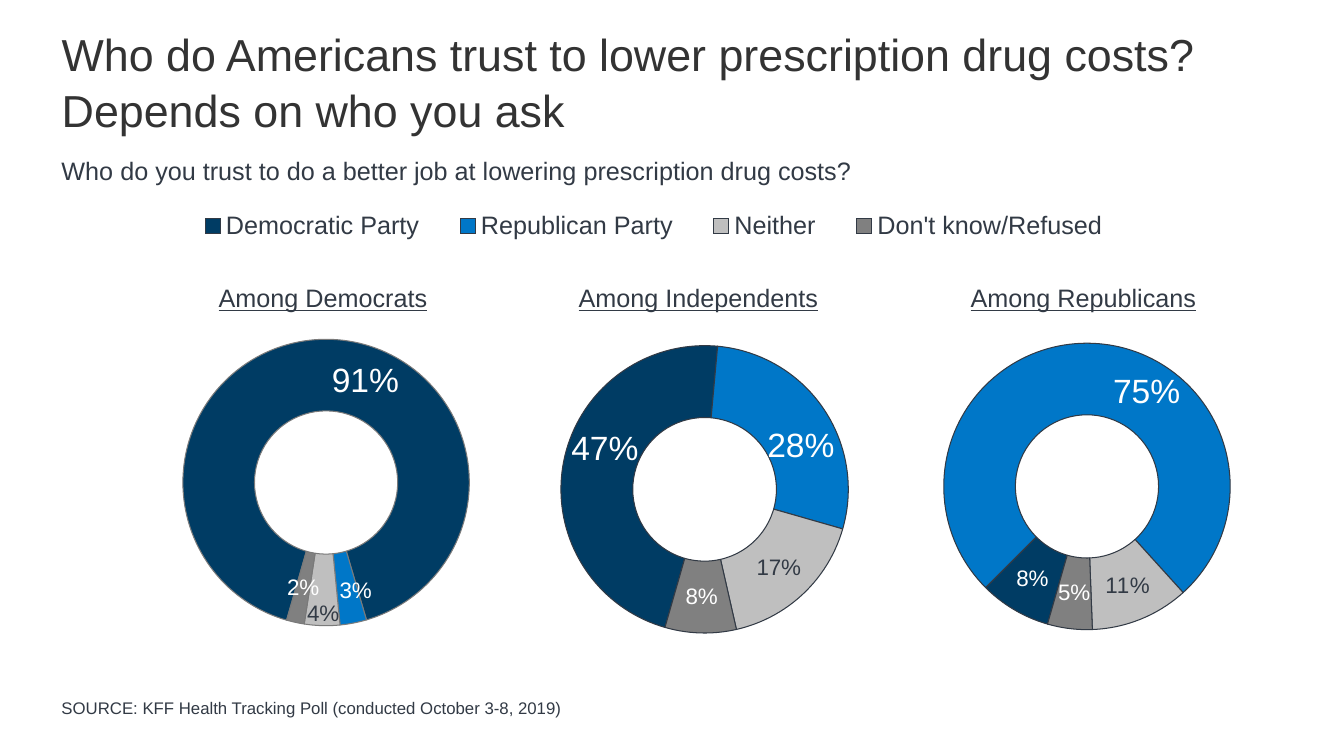
from lxml import etree
from pptx import Presentation
from pptx.chart.data import CategoryChartData
from pptx.dml.color import RGBColor
from pptx.enum.chart import XL_CHART_TYPE, XL_LEGEND_POSITION
from pptx.enum.text import MSO_ANCHOR, PP_ALIGN
from pptx.oxml.ns import qn
from pptx.util import Cm, Pt

DOUGHNUT = XL_CHART_TYPE.DOUGHNUT
LEGEND_TOP = XL_LEGEND_POSITION.TOP
TOP, BOTTOM = MSO_ANCHOR.TOP, MSO_ANCHOR.BOTTOM
LEFT = PP_ALIGN.LEFT


class Theme:
    font = "Arial"
    title, ink, white, grey_line = "333333", "323A45", "FFFFFF", "7A7A7A"
    answers = ["003C64", "0077C8", "BFBFBF", "808080"]
    label_colors = [white, white, ink, white]
    title_size, body_size, source_size = 32, 18, 12
    big_label, small_label, chart_size = 24, 16, 10


ANSWERS = ["Democratic Party", "Republican Party", "Neither", "Don't know/Refused"]
NUMBERS = ["1", "2", "3", "4"]
HOLE, START_ANGLE = 49, 196

# Shifts move a slice's label, as shares of the chart's width and height.
GROUPS = [
    dict(heading="Among Independents", heading_at=(14.33, 7.98),
         box=(-1.75, 4.37, 31.29, 12.62), plot=(0.454, 0.344, 0.339, 0.574),
         cats=ANSWERS, values=(0.47, 0.28, 0.17, 0.08), line=Theme.ink,
         big=(0, 1), shifts={0: (0.005, -0.042), 1: (0.006, 0.034)},
         legend=(0.195, 0.075, 0.775, 0.06)),
    dict(heading="Among Democrats", heading_at=(5.26, 7.42),
         box=(1.52, 6.32, 12.5, 10.57), plot=(0.247, 0.211, 0.578, 0.683),
         cats=NUMBERS, values=(0.91, 0.03, 0.04, 0.02), line=Theme.grey_line,
         big=(0,), shifts={0: (0.08, 0.015), 1: (0.018, 0.007), 2: (0, 0.057)}),
    dict(heading="Among Republicans", heading_at=(24.21, 7.44),
         box=(20.17, 6.99, 12.5, 10.57), plot=(0.289, 0.157, 0.578, 0.683),
         cats=NUMBERS, values=(0.08, 0.75, 0.11, 0.05), line=Theme.ink,
         big=(1,), shifts={1: (0.115, 0.031)}),
]


def rgb(color):
    return RGBColor.from_string(color)


def set_layout(parent, index, **values):
    """Give a chart part a manual layout as its child at the given index."""
    for old in parent.findall(qn("c:layout")):
        parent.remove(old)
    layout = etree.Element(qn("c:layout"))
    manual = etree.SubElement(layout, qn("c:manualLayout"))
    for name, value in values.items():
        etree.SubElement(manual, qn("c:" + name)).set("val", str(value))
    parent.insert(index, layout)


def edges(rect):
    return dict(xMode="edge", yMode="edge", **dict(zip("xywh", rect)))


class Deck:
    def __init__(self, theme):
        self.theme = theme
        self.prs = Presentation()
        self.prs.slide_width, self.prs.slide_height = Cm(33.87), Cm(19.05)
        self.s = self.prs.slides.add_slide(self.prs.slide_layouts[5])

    def style(self, font, size, color, **more):
        values = dict(name=self.theme.font, size=Pt(size), **more)
        for name, value in values.items():
            setattr(font, name, value)
        font.color.rgb = rgb(color)

    def fill_text(self, sp, text, size, color, anchor=TOP, spacing=1.0, **more):
        tf = sp.text_frame
        tf.word_wrap, tf.vertical_anchor = True, anchor
        p = tf.paragraphs[0]
        p.alignment, p.line_spacing = LEFT, spacing
        r = p.add_run()
        r.text = text
        self.style(r.font, size, color, **more)

    def title(self, text, box):
        sp = self.s.shapes.title
        sp.left, sp.top, sp.width, sp.height = map(Cm, box)
        self.fill_text(sp, text, self.theme.title_size, self.theme.title, spacing=1.05)

    def text(self, text, box, size, **more):
        sp = self.s.shapes.add_textbox(*map(Cm, box))
        self.fill_text(sp, text, size, self.theme.ink, **more)

    def doughnut(self, group):
        t = self.theme
        data = CategoryChartData(number_format="0%")
        data.categories = group["cats"]
        data.add_series("Series 1", group["values"])
        box = map(Cm, group["box"])
        chart = self.s.shapes.add_chart(DOUGHNUT, *box, data).chart
        chart.has_title = False
        self.style(chart.font, t.chart_size, t.title)
        plot = chart.plots[0]
        plot.vary_by_categories = True
        ring = plot._element
        ring.find(qn("c:holeSize")).set("val", str(HOLE))
        ring.find(qn("c:firstSliceAng")).set("val", str(START_ANGLE))
        set_layout(ring.getparent(), 0, layoutTarget="inner", **edges(group["plot"]))
        self.slices(plot.series[0], group)
        chart.has_legend = "legend" in group
        if chart.has_legend:
            self.legend(chart.legend, group["legend"])

    def slices(self, series, group):
        t = self.theme
        labels = series.data_labels
        labels.show_value = True
        labels.number_format, labels.number_format_is_linked = "0%", False
        self.style(labels.font, t.small_label, t.white)
        for i, color in enumerate(t.answers):
            point = series.points[i]
            point.format.fill.solid()
            point.format.fill.fore_color.rgb = rgb(color)
            point.format.line.color.rgb = rgb(group["line"])
            point.format.line.width = Pt(0.75)
            size = t.big_label if i in group["big"] else t.small_label
            self.style(point.data_label.font, size, t.label_colors[i])
        for label in labels._element.findall(qn("c:dLbl")):
            i = int(label.find(qn("c:idx")).get("val"))
            if i in group["shifts"]:
                set_layout(label, 1, **dict(zip("xy", group["shifts"][i])))

    def legend(self, legend, rect):
        legend.position, legend.include_in_layout = LEGEND_TOP, False
        self.style(legend.font, self.theme.body_size, self.theme.ink)
        set_layout(legend._element, 1, **edges(rect))


def main():
    t = Theme
    deck = Deck(t)
    deck.title("Who do Americans trust to lower prescription drug costs? "
               "Depends on who you ask", (1.3, 0.48, 31.34, 2.54))
    deck.text("SOURCE: KFF Health Tracking Poll (conducted October 3-8, 2019)",
              (1.3, 16.69, 22.81, 1.52), t.source_size, anchor=BOTTOM)
    deck.text("Who do you trust to do a better job at lowering prescription drug costs?",
              (1.3, 3.78, 22.63, 1.02), t.body_size)
    for group in GROUPS:
        left, width = group["heading_at"]
        deck.text(group["heading"], (left, 6.99, width, 1.02), t.body_size,
                  underline=True)
    for group in GROUPS:
        deck.doughnut(group)
    deck.prs.save("out.pptx")


if __name__ == "__main__":
    main()
